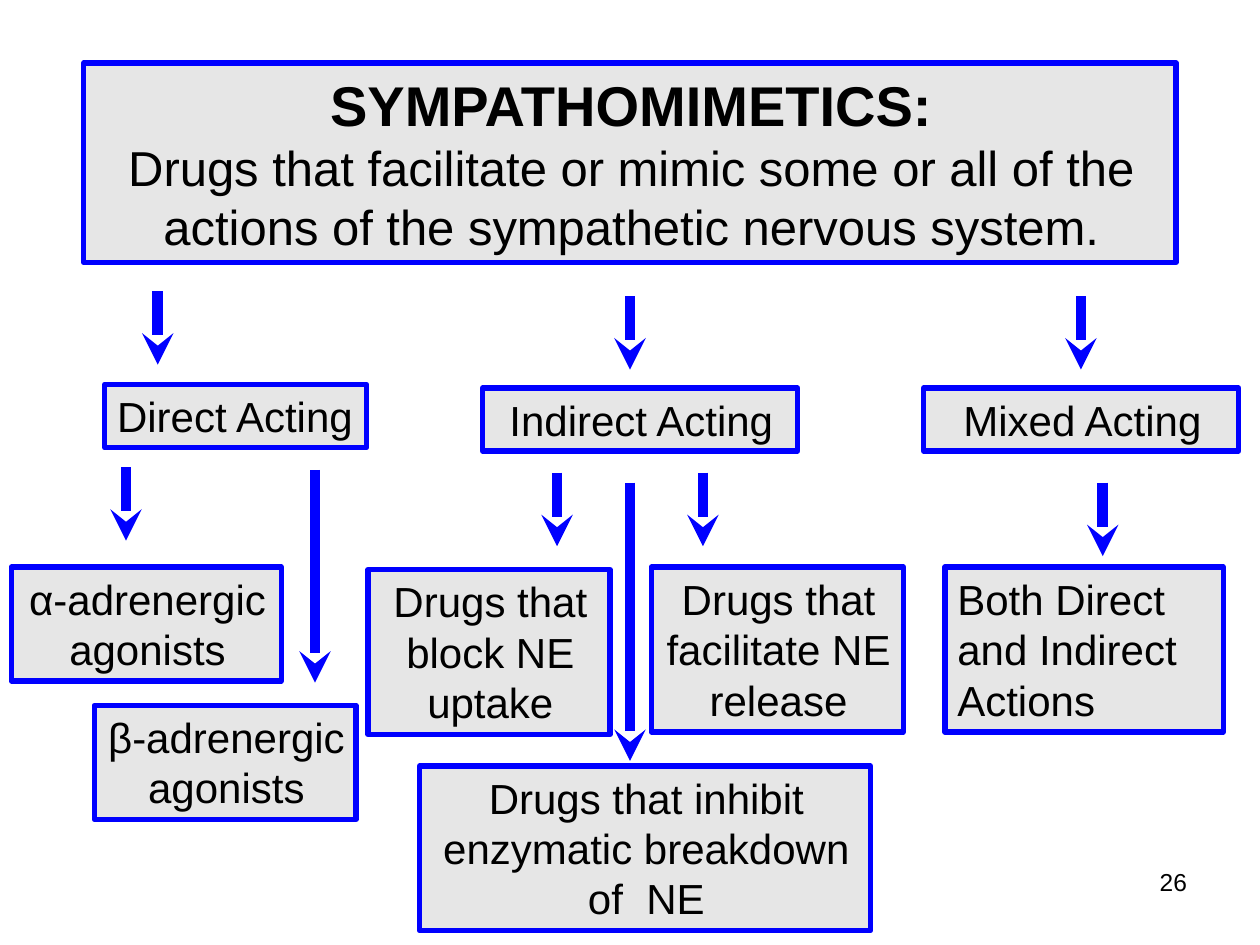
"""Build a slide that classifies sympathomimetic drugs."""
from lxml import etree
from pptx import Presentation
from pptx.dml.color import RGBColor
from pptx.enum.shapes import MSO_CONNECTOR, MSO_SHAPE
from pptx.enum.text import MSO_ANCHOR, MSO_AUTO_SIZE, PP_ALIGN
from pptx.oxml.ns import qn
from pptx.util import Cm, Pt

STRAIGHT = MSO_CONNECTOR.STRAIGHT
RECTANGLE = MSO_SHAPE.RECTANGLE
TOP, MIDDLE = MSO_ANCHOR.TOP, MSO_ANCHOR.MIDDLE
NO_AUTOFIT = MSO_AUTO_SIZE.NONE
LEFT, CENTER, RIGHT = PP_ALIGN.LEFT, PP_ALIGN.CENTER, PP_ALIGN.RIGHT

COLORS = {"panel": "E6E6E6", "border": "0000FF", "text": "000000"}
FONT = "Arial"
LINE_HEIGHT, BOX_PADDING = 1.025, 0.25
SHORT_ARROW = 1.48

HEADING = "SYMPATHOMIMETICS:"
DEFINITION = ("Drugs that facilitate or mimic some or all of the actions "
              "of the sympathetic nervous system.")
PAGE_NUMBER = "26"

DRUG_CLASSES = [
    ("Indirect Acting", 9.73, 7.82, 6.35, 1, CENTER),
    ("Direct Acting", 2.11, 7.75, 5.28, 1, LEFT),
    ("Mixed Acting", 18.62, 7.82, 6.35, 1, CENTER),
    ("Drugs that facilitate NE release", 13.13, 11.43, 5.08, 3, CENTER),
    ("α-adrenergic agonists", 0.23, 11.43, 5.44, 2, CENTER),
    ("β-adrenergic agonists", 1.9, 14.22, 5.28, 2, CENTER),
    ("Drugs that block NE uptake", 7.42, 11.48, 4.88, 3, CENTER),
    ("Both Direct and Indirect Actions", 19.05, 11.43, 5.61, 3, LEFT),
    ("Drugs that inhibit enzymatic breakdown of  NE", 8.46, 15.44, 9.09, 3, CENTER),
]
ARROWS = [
    (3.18, 5.87, SHORT_ARROW),
    (12.7, 5.97, SHORT_ARROW),
    (21.79, 5.97, SHORT_ARROW),
    (2.54, 9.42, SHORT_ARROW),
    (6.35, 9.47, 4.29),
    (11.23, 9.53, SHORT_ARROW),
    (14.17, 9.53, SHORT_ARROW),
    (22.23, 9.73, SHORT_ARROW),
    (12.7, 9.73, 5.61),
]


def color(role):
    return RGBColor.from_string(COLORS[role])


def place(shape, left, top, width, height):
    shape.left, shape.top = Cm(left), Cm(top)
    shape.width, shape.height = Cm(width), Cm(height)


def style_panel(panel):
    panel.fill.solid()
    panel.fill.fore_color.rgb = color("panel")
    panel.line.color.rgb = color("border")
    panel.line.width = Pt(3)


def write(shape, paragraphs, align, anchor):
    frame = shape.text_frame
    frame.text = "\n".join(text for text, size, bold in paragraphs)
    frame.word_wrap = True
    frame.auto_size = NO_AUTOFIT
    frame.vertical_anchor = anchor
    frame.margin_left, frame.margin_right = Cm(0.25), Cm(0.2)
    for paragraph, (text, size, bold) in zip(frame.paragraphs, paragraphs):
        paragraph.alignment = align
        font = paragraph.runs[0].font
        font.name, font.size, font.bold = FONT, Pt(size), bold
        font.color.rgb = color("text")


def add_drug_class(slide, text, left, top, width, lines, align):
    height = BOX_PADDING + lines * LINE_HEIGHT
    box = slide.shapes.add_shape(RECTANGLE, Cm(left), Cm(top), Cm(width), Cm(height))
    box.shadow.inherit = False
    style_panel(box)
    write(box, [(text, 24, False)], align, TOP)


def add_arrow(slide, x, top, length):
    arrow = slide.shapes.add_connector(STRAIGHT, Cm(x), Cm(top), Cm(x), Cm(top + length))
    arrow.line.color.rgb = color("border")
    arrow.line.width = Pt(6)
    etree.SubElement(arrow.line._get_or_add_ln(), qn("a:tailEnd"), type="stealth")
    etree.SubElement(arrow._element.spPr, qn("a:effectLst"))


def main():
    deck = Presentation()
    deck.slide_width, deck.slide_height = Cm(25.4), Cm(19.05)
    slide = deck.slides.add_slide(deck.slide_layouts[5])

    title = slide.shapes.title
    place(title, 1.69, 1.27, 22.02, 4.02)
    style_panel(title)
    write(title, [(HEADING, 32, True), (DEFINITION, 28, False)], CENTER, MIDDLE)

    page = slide.shapes.add_textbox(Cm(18.21), Cm(17.35), Cm(5.92), Cm(1.32))
    write(page, [(PAGE_NUMBER, 14, False)], RIGHT, TOP)

    for drug_class in DRUG_CLASSES:
        add_drug_class(slide, *drug_class)
    for arrow in ARROWS:
        add_arrow(slide, *arrow)

    deck.save("out.pptx")


if __name__ == "__main__":
    main()
